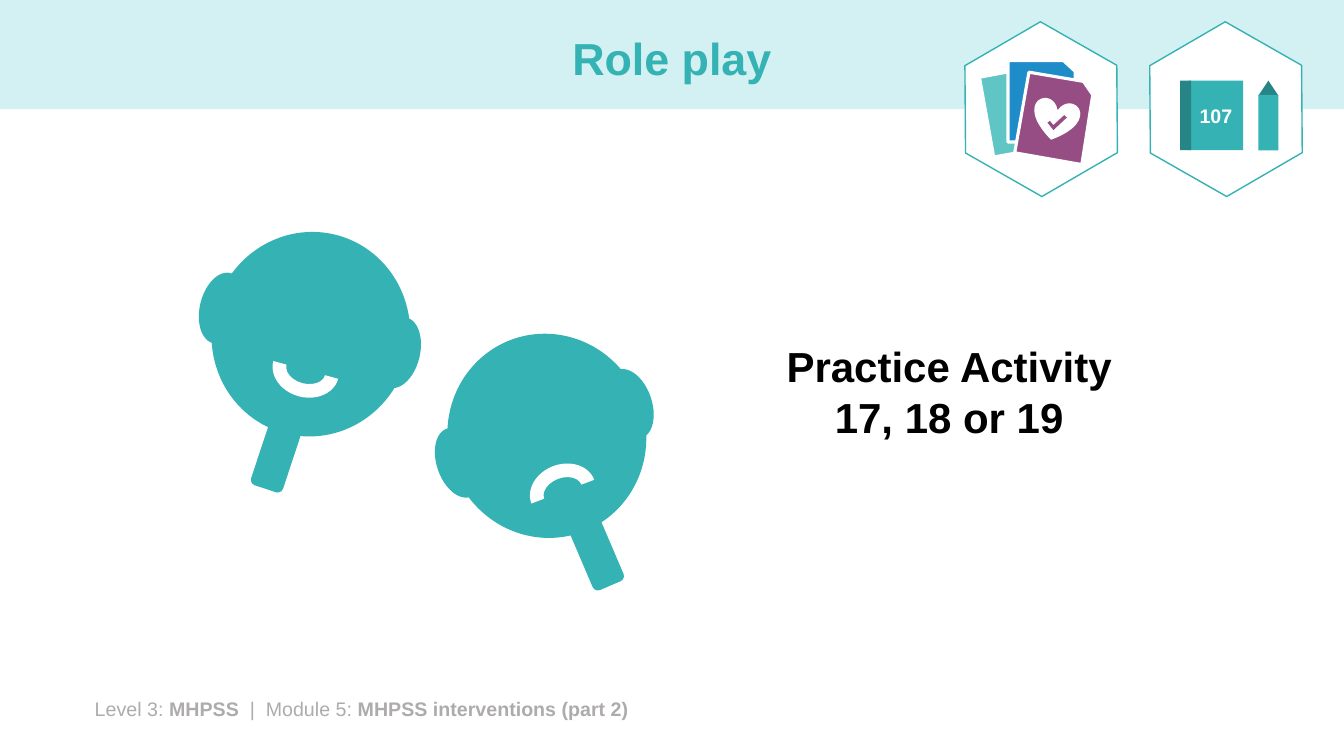
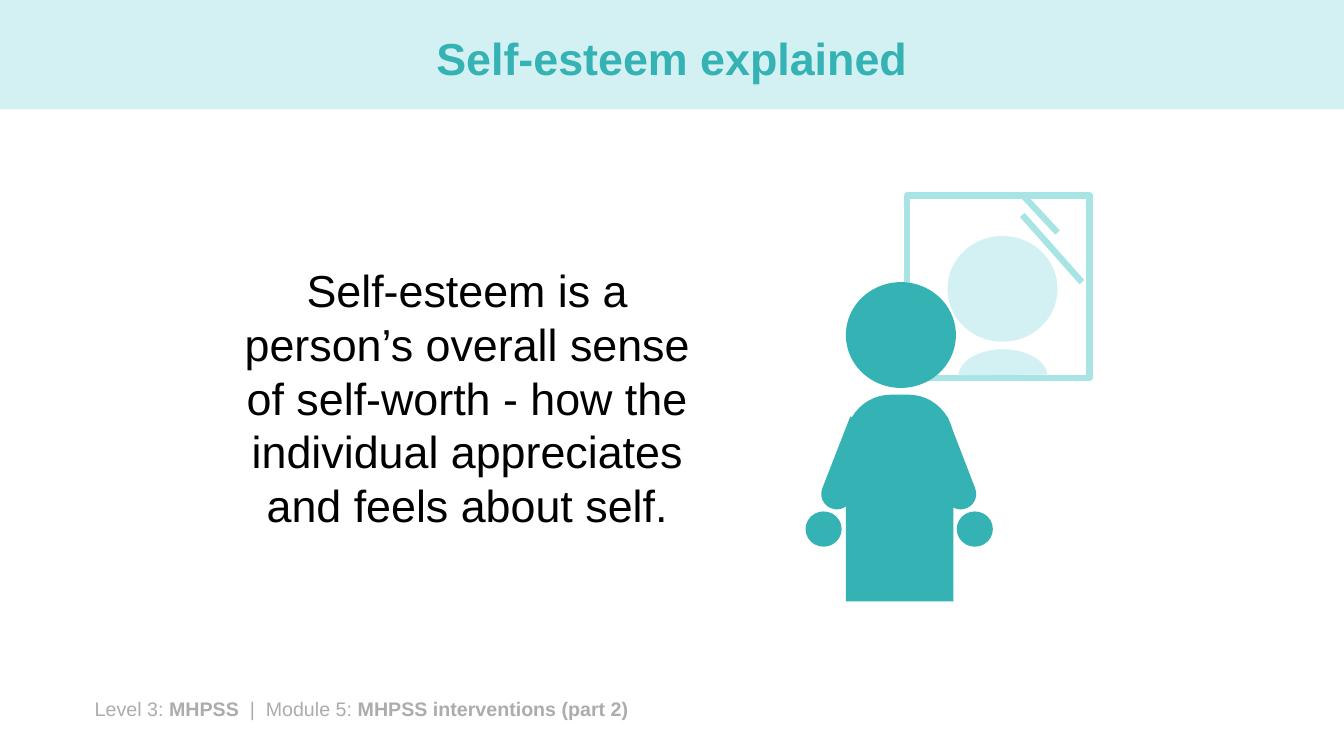
"""Build two training slides: a role play prompt and a self-esteem definition."""
from lxml import etree
from pptx import Presentation
from pptx.dml.color import RGBColor
from pptx.enum.shapes import MSO_CONNECTOR, MSO_SHAPE
from pptx.enum.text import MSO_ANCHOR, PP_ALIGN
from pptx.oxml.ns import qn
from pptx.util import Inches, Pt

FREEFORM = "freeform"
RECTANGLE, OVAL, HEXAGON = MSO_SHAPE.RECTANGLE, MSO_SHAPE.OVAL, MSO_SHAPE.HEXAGON
ROUNDED, ROUND_TOP = MSO_SHAPE.ROUNDED_RECTANGLE, MSO_SHAPE.ROUND_2_SAME_RECTANGLE
ARC, CHORD = MSO_SHAPE.BLOCK_ARC, MSO_SHAPE.CHORD
TRIANGLE, HEART = MSO_SHAPE.ISOSCELES_TRIANGLE, MSO_SHAPE.HEART
STRAIGHT = MSO_CONNECTOR.STRAIGHT
LEFT, CENTER = PP_ALIGN.LEFT, PP_ALIGN.CENTER
TOP, MIDDLE = MSO_ANCHOR.TOP, MSO_ANCHOR.MIDDLE

TEAL = RGBColor(0x35, 0xB2, 0xB4)
DARK_TEAL = RGBColor(0x27, 0x85, 0x87)
SOFT_TEAL = RGBColor(0x5F, 0xC6, 0xC5)
GLASS = RGBColor(0xA9, 0xE4, 0xE5)
PALE = RGBColor(0xD3, 0xF1, 0xF2)
BLUE = RGBColor(0x1D, 0x8C, 0xC8)
PURPLE = RGBColor(0x95, 0x4D, 0x84)
GREY = RGBColor(0xAE, 0xAB, 0xAB)
BLACK = RGBColor(0, 0, 0)
WHITE = RGBColor(0xFF, 0xFF, 0xFF)

FONT = "Arial"
COLUMNS = 160
FOOTER = [("Level 3: ", False), ("MHPSS", True), ("  |  Module 5: ", False),
          ("MHPSS interventions (part 2)", True)]

deck = Presentation()
deck.slide_width, deck.slide_height = Inches(13.33), Inches(7.5)
CELL = deck.slide_width / COLUMNS


def add_piece(page, kind, place, fill=None, turn=0, adjust=(), line=None, weight=1):
    if kind == FREEFORM:
        points = [(x * CELL, y * CELL) for x, y in place]
        builder = page.shapes.build_freeform(*points[0])
        builder.add_line_segments(points[1:], close=True)
        piece = builder.convert_to_shape()
    else:
        piece = page.shapes.add_shape(kind, *(round(value * CELL) for value in place))
    piece.shadow.inherit = False
    piece.rotation = turn
    for index, value in enumerate(adjust):
        piece.adjustments[index] = value
    if fill is None:
        piece.fill.background()
    else:
        piece.fill.solid()
        piece.fill.fore_color.rgb = fill
    if line is None:
        piece.line.fill.background()
    else:
        piece.line.color.rgb = line
        piece.line.width = Pt(weight)
    return piece


def write_text(box, spans, size, color, align=CENTER, anchor=TOP, spacing=1.0):
    frame = box.text_frame
    frame.word_wrap = True
    frame.vertical_anchor = anchor
    para = frame.paragraphs[0]
    para.alignment = align
    para.line_spacing = spacing
    para.font.name = FONT
    para.font.size = Pt(size)
    para.font.color.rgb = color
    for text, bold in spans:
        span = para.add_run()
        span.text = text
        span.font.bold = bold


slides = [
    ("Role play", "Practice Activity 17, 18 or 19", (91.6, 40, 42.8, 13.3), 30, True),
    ("Self-esteem explained",
     "Self-esteem is a person’s overall sense of self-worth - how the individual "
     "appreciates and feels about self.", (27.4, 30.7, 56.5, 33.5), 32, False),
]
pages = []
for title, body, body_place, body_size, body_bold in slides:
    page = deck.slides.add_slide(deck.slide_layouts[6])
    pages.append(page)
    add_piece(page, RECTANGLE, (0, 0, COLUMNS, 13), PALE)
    texts = [
        ((10.1, 82.4, 136.2, 4.1), FOOTER, 14, GREY, LEFT),
        ((11, 1.6, 138, 11.4), [(title, True)], 32, TEAL, CENTER, MIDDLE, 0.9),
        (body_place, [(body, body_bold)], body_size, BLACK),
    ]
    for place, *style in texts:
        box = page.shapes.add_textbox(*(round(value * CELL) for value in place))
        write_text(box, *style)

role_play, self_esteem = pages

mask_parts = [
    (ROUNDED, (4, 11.5), TEAL, (0.167,)),
    (OVAL, (23.6, 24.4), TEAL, ()),
    (OVAL, (5.2, 8.6), TEAL, ()),
    (OVAL, (5.2, 8.6), TEAL, ()),
    (ARC, (8, 6.5), WHITE, (108, 0, 0.25)),
]
masks = [
    [(31.4, 47, 18.3), (25.2, 27.6, 13.8), (23.8, 32.4, 13.8), (44.8, 37.7, 13.8),
     (32.4, 40.8, 195.3)],
    [(68.4, 58.7, 336.9), (53.3, 39.7, 341), (52, 50.8, 341), (72.4, 43.8, 341),
     (63, 55.3, 339.3)],
]
for spots in masks:
    for (kind, size, fill, adjust), (left, top, turn) in zip(mask_parts, spots):
        add_piece(role_play, kind, (left, top, *size), fill, turn, adjust)

for left in (135.5, 113.5):
    add_piece(role_play, HEXAGON, (left, 4, 20.9, 18), WHITE, 29.7, (0.29,), TEAL)

book = add_piece(role_play, RECTANGLE, (141.5, 9.6, 6.5, 8.3), TEAL)
write_text(book, [("107", True)], 14, WHITE, CENTER, MIDDLE)
add_piece(role_play, RECTANGLE, (140.5, 9.6, 1.3, 8.3), DARK_TEAL)
add_piece(role_play, TRIANGLE, (149.8, 9.6, 2.4, 1.8), DARK_TEAL)
add_piece(role_play, RECTANGLE, (149.8, 11.3, 2.4, 6.6), TEAL)

cards = [
    (SOFT_TEAL, [(116.6, 9.2), (123.1, 8), (124.7, 9.1), (126.2, 17.3), (118.3, 18.7)]),
    (BLUE, [(120, 7.2), (126.6, 7.2), (128, 8.5), (128, 16.9), (120, 16.9)]),
    (PURPLE, [(122.5, 8.6), (129, 9.7), (130.1, 11.3), (128.8, 19.6), (120.8, 18.2)]),
]
for fill, corners in cards:
    add_piece(role_play, FREEFORM, corners, fill, line=WHITE, weight=2.25)
add_piece(role_play, HEART, (122.9, 11.9, 5.5, 4.8), WHITE, 12.6)
tick = [(124.7, 14.6), (125, 14.4), (125.4, 14.9), (126.7, 13.7), (127, 14), (125.4, 15.5)]
add_piece(role_play, FREEFORM, tick, PURPLE)

add_piece(self_esteem, OVAL, (112.8, 28.1, 13.1, 12.6), PALE)
add_piece(self_esteem, RECTANGLE, (108, 23.3, 21.7, 21.7), line=GLASS, weight=4.5)
add_piece(self_esteem, ROUND_TOP, (100.7, 47, 12.8, 24.6), TEAL, adjust=(0.419, 0))
add_piece(self_esteem, OVAL, (100.7, 33.6, 13.1, 12.6), TEAL)
for arm_left, arm_turn, hand_left in [(99.1, 201.3, 95.9), (111.2, 158.9, 113.9)]:
    add_piece(self_esteem, ROUND_TOP, (arm_left, 49.9, 3.7, 11), TEAL, arm_turn, (0.493, 0))
    add_piece(self_esteem, OVAL, (hand_left, 60.9, 4.3, 4.2), TEAL)
add_piece(self_esteem, CHORD, (114.1, 41.6, 10.6, 6.4), PALE, adjust=(108.657, 214.765))

for ends in [(121.7, 25.6, 128.8, 33.6), (121.9, 23.4, 125.9, 27.7)]:
    glint = self_esteem.shapes.add_connector(STRAIGHT, *(round(end * CELL) for end in ends))
    glint.line.color.rgb = GLASS
    glint.line.width = Pt(4.5)
    etree.SubElement(glint._element.spPr, qn("a:effectLst"))

deck.save("out.pptx")
